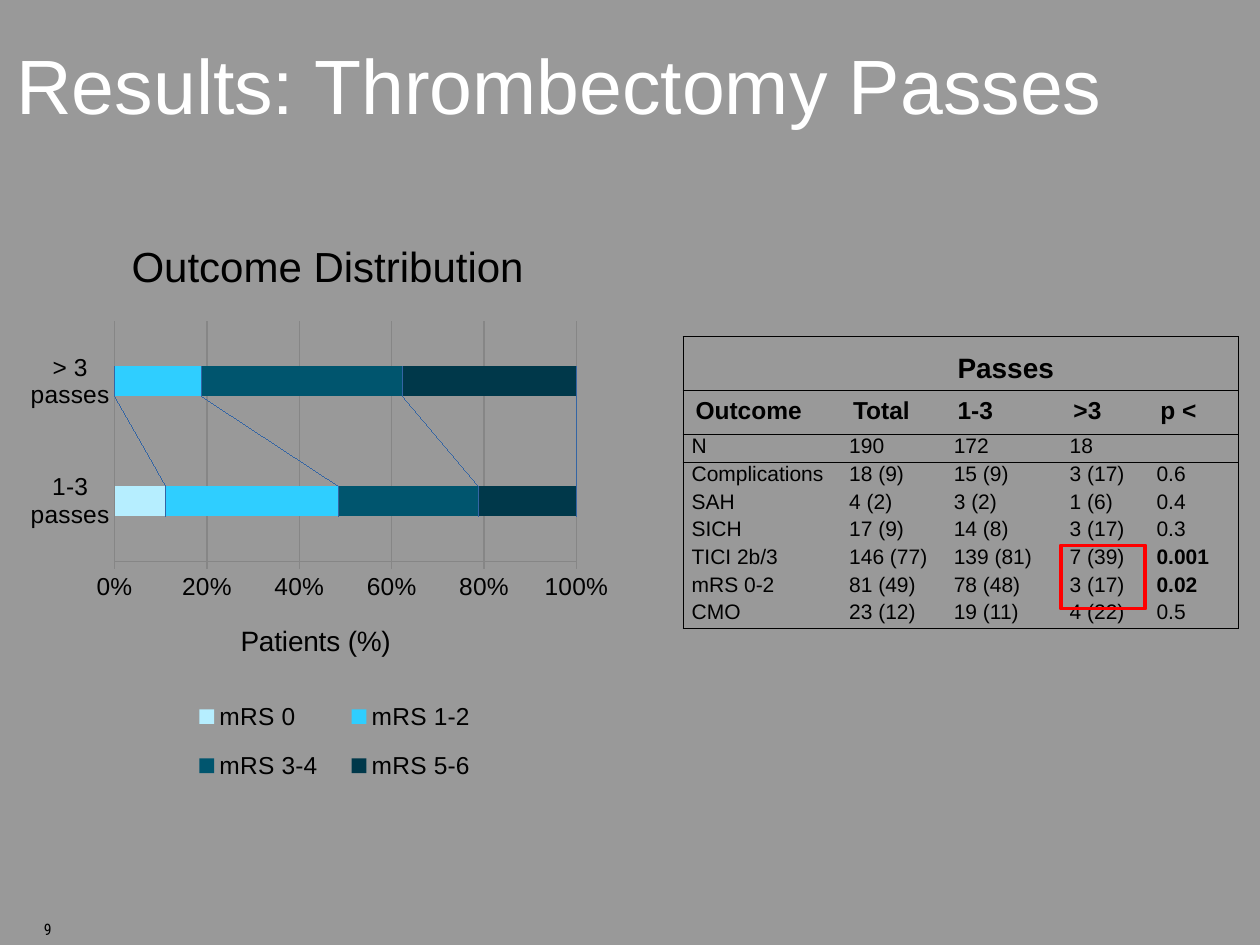
from dataclasses import dataclass

from lxml import etree
from pptx import Presentation
from pptx import util as u
from pptx.chart import data
from pptx.dml.color import RGBColor
from pptx.enum import chart as ch, shapes, text
from pptx.oxml.ns import qn


@dataclass(frozen=True)
class Theme:
    wide: float = 10
    high: float = 7.5
    back: str = "999999"
    ink: str = "000000"
    light: str = "FFFFFF"
    mark: str = "FF0000"
    grid: str = "868686"
    link: str = "2A5CAA"
    face: str = "Arial"
    slim: str = "Roboto Condensed"
    title: int = 44
    head: int = 24
    sub: int = 16
    label: int = 14
    body: int = 12
    small: int = 9


T = Theme()
CATS = ("1-3 passes", "> 3 passes")
SERIES = (
    ("mRS 0", (11, 0), "B6EEFF"),
    ("mRS 1-2", (37, 19), "2FCEFF"),
    ("mRS 3-4", (30, 44), "00556E"),
    ("mRS 5-6", (21, 38), "00384A"),
)
ROWS = (
    ("", "", "Passes", "", ""),
    ("Outcome", "Total", "1-3", ">3", "p <"),
    ("N", "190", "172", "18", ""),
    ("Complications", "18 (9)", "15 (9)", "3 (17)", "0.6"),
    ("SAH", "4 (2)", "3 (2)", "1 (6)", "0.4"),
    ("SICH", "17 (9)", "14 (8)", "3 (17)", "0.3"),
    ("TICI 2b/3", "146 (77)", "139 (81)", "7 (39)", "0.001"),
    ("mRS 0-2", "81 (49)", "78 (48)", "3 (17)", "0.02"),
    ("CMO", "23 (12)", "19 (11)", "4 (22)", "0.5"),
)
WIDTHS = (1.25, 0.83, 0.92, 0.69, 0.72)
HEIGHTS = (0.43, 0.35) + (0.22,) * 7
STRONG = ("0.001", "0.02")
PLAIN = "{2D5ABB26-0587-4C30-8999-92F81FD0307C}"


def place(x, y, w, h):
    return [u.Inches(round(n, 2)) for n in (x * T.wide, y * T.high, w * T.wide, h * T.high)]


def assign(obj, **vals):
    for name, val in vals.items():
        setattr(obj, name, val)


def style(font, size, color=T.ink, face=T.face, bold=False):
    assign(font, size=u.Pt(size), name=face, bold=bold)
    font.color.rgb = RGBColor.from_string(color)


def stroke(line, color, width=0.75):
    line.color.rgb = RGBColor.from_string(color)
    line.width = u.Pt(width)


def write(frame, words, size, **look):
    frame.text = words
    style(frame.paragraphs[0].runs[0].font, size, **look)


def add_title(slide):
    box = slide.shapes.title
    assign(box, **dict(zip(("left", "top", "width", "height"), place(0.003, 0, 0.925, 0.177))))
    write(box.text_frame, "Results: Thrombectomy Passes", T.title, color=T.light)
    box.text_frame.vertical_anchor = text.MSO_ANCHOR.MIDDLE
    box.text_frame.paragraphs[0].alignment = text.PP_ALIGN.LEFT


def add_page(slide):
    frame = slide.shapes.add_textbox(*place(0.025, 0.967, 0.208, 0.033)).text_frame
    assign(frame, word_wrap=True, vertical_anchor=text.MSO_ANCHOR.MIDDLE)
    write(frame, "9", T.small, face=T.slim)


def fix(host, after, **vals):
    for old in host.findall(qn("c:layout")):
        host.remove(old)
    layout = etree.Element(qn("c:layout"))
    manual = etree.SubElement(layout, qn("c:manualLayout"))
    for tag, val in vals.items():
        etree.SubElement(manual, qn("c:" + tag)).set("val", str(val))
    prior = host.find(qn("c:" + after)) if after else None
    if prior is None:
        host.insert(0, layout)
    else:
        prior.addnext(layout)


def add_links(plot):
    lines = etree.Element(qn("c:serLines"))
    props = etree.SubElement(lines, qn("c:spPr"))
    line = etree.SubElement(props, qn("a:ln"), w=str(u.Pt(0.75)))
    fill = etree.SubElement(line, qn("a:solidFill"))
    etree.SubElement(fill, qn("a:srgbClr"), val=T.link)
    plot._element.find(qn("c:overlap")).addnext(lines)


def head(obj, words, size, x, y):
    write(obj.text_frame, words, size)
    fix(obj._element, "tx", xMode="edge", yMode="edge", x=x, y=y)


def add_bars(slide):
    facts = data.CategoryChartData()
    facts.categories = CATS
    for name, vals, _ in SERIES:
        facts.add_series(name, vals)
    area = place(0, 0.223, 0.492, 0.744)
    chart = slide.shapes.add_chart(ch.XL_CHART_TYPE.BAR_STACKED_100, *area, facts).chart
    style(chart.font, T.label)
    chart.has_title = True
    head(chart.chart_title, "Outcome Distribution", T.head, 0.2, 0.03)
    plot = chart.plots[0]
    assign(plot, gap_width=300, overlap=100, vary_by_categories=False)
    for bar, (_, _, color) in zip(plot.series, SERIES):
        bar.format.fill.solid()
        bar.format.fill.fore_color.rgb = RGBColor.from_string(color)
    add_links(plot)
    cat, val = chart.category_axis, chart.value_axis
    tick = ch.XL_TICK_MARK
    assign(cat, major_tick_mark=tick.NONE, has_major_gridlines=False)
    assign(val, major_tick_mark=tick.OUTSIDE, has_major_gridlines=True, has_title=True,
           minimum_scale=0, maximum_scale=1, major_unit=0.2)
    assign(val.tick_labels, number_format="0%", number_format_is_linked=False)
    for line in (cat.format.line, val.format.line, val.major_gridlines.format.line):
        stroke(line, T.grid)
    head(val.axis_title, "Patients (%)", T.sub, 0.38, 0.58)
    chart.has_legend = True
    assign(chart.legend, position=ch.XL_LEGEND_POSITION.RIGHT, include_in_layout=False)
    fix(chart.legend._element, "legendPos", xMode="edge", yMode="edge", x=0.28, y=0.67, w=0.52, h=0.17)
    fix(plot._element.getparent(), None, layoutTarget="inner", xMode="edge", yMode="edge",
        x=0.185, y=0.158, w=0.745, h=0.341)


def edge(cell, row, col):
    last, end = len(ROWS) - 1, len(WIDTHS) - 1
    sides = {
        "L": 0.5 if col == 0 else 0,
        "R": 0.5 if col == end else 0,
        "T": {0: 0.5, 1: 1, 2: 1}.get(row, 0),
        "B": {0: 1, 1: 1, last: 0.5}.get(row, 0),
    }
    props = cell._tc.get_or_add_tcPr()
    for side, width in sides.items():
        if width:
            line = etree.SubElement(props, qn("a:ln" + side), w=str(u.Pt(width)))
            fill = etree.SubElement(line, qn("a:solidFill"))
            etree.SubElement(fill, qn("a:srgbClr"), val=T.ink)


def fill_cell(cell, words, row, col):
    edge(cell, row, col)
    cell.fill.background()
    para = cell.text_frame.paragraphs[0]
    para.alignment = text.PP_ALIGN.CENTER if col else text.PP_ALIGN.LEFT
    if row == 0:
        cell.vertical_anchor = text.MSO_ANCHOR.BOTTOM
    if row > 1:
        side = u.Inches(0.07)
        assign(cell, margin_left=side, margin_right=side, margin_top=0, margin_bottom=0)
        para.line_spacing = 1.07
    size = {0: T.sub, 1: T.label}.get(row, T.body)
    if words:
        write(cell.text_frame, words, size, bold=row < 2 or words in STRONG)
    else:
        para.font.size = u.Pt(T.body)


def add_grid(slide):
    area = place(0.542, 0.356, 0.442, 0.311)
    table = slide.shapes.add_table(len(ROWS), len(WIDTHS), *area).table
    assign(table, first_row=False, horz_banding=False)
    table._tbl.tblPr.find(qn("a:tableStyleId")).text = PLAIN
    for col, width in zip(table.columns, WIDTHS):
        col.width = u.Inches(width)
    for row, height in zip(table.rows, HEIGHTS):
        row.height = u.Inches(height)
    table.cell(0, 2).merge(table.cell(0, 3))
    for r, row in enumerate(ROWS):
        for c, words in enumerate(row):
            fill_cell(table.cell(r, c), words, r, c)


def add_mark(slide):
    box = slide.shapes.add_shape(shapes.MSO_SHAPE.RECTANGLE, *place(0.842, 0.577, 0.067, 0.067))
    box.shadow.inherit = False
    box.fill.background()
    stroke(box.line, T.mark, 2.25)


def main():
    deck = Presentation()
    assign(deck, slide_width=u.Inches(T.wide), slide_height=u.Inches(T.high))
    slide = deck.slides.add_slide(deck.slide_layouts[5])
    slide.background.fill.solid()
    slide.background.fill.fore_color.rgb = RGBColor.from_string(T.back)
    for add in (add_title, add_page, add_bars, add_grid, add_mark):
        add(slide)
    deck.save("out.pptx")


if __name__ == "__main__":
    main()
